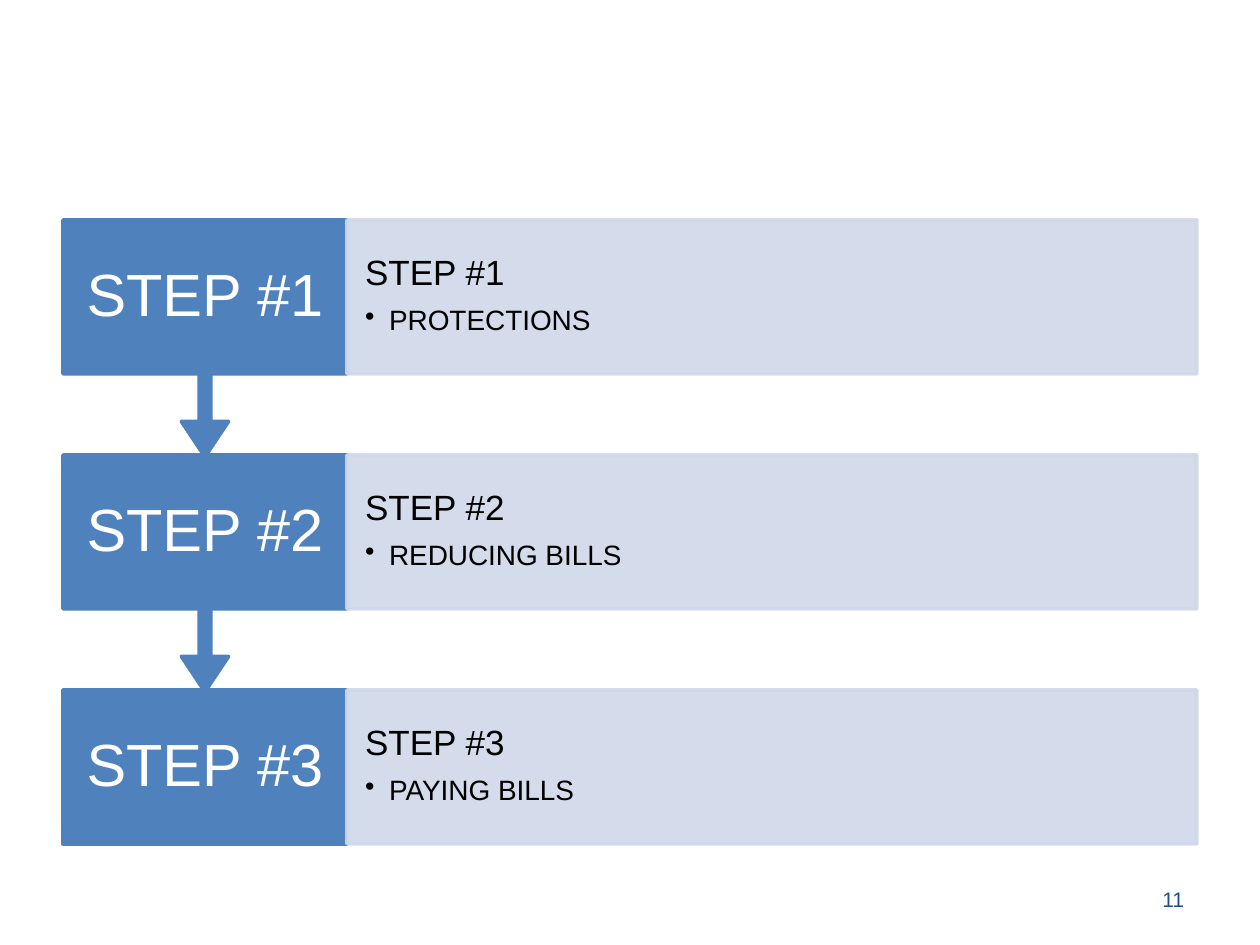
from lxml import etree
from pptx import Presentation
from pptx.dml.color import RGBColor
from pptx.enum.shapes import MSO_SHAPE
from pptx.enum.text import MSO_ANCHOR, PP_ALIGN
from pptx.oxml.ns import qn
from pptx.util import Pt

RECT = MSO_SHAPE.RECTANGLE
CALLOUT = MSO_SHAPE.DOWN_ARROW_CALLOUT
TOP, MIDDLE = MSO_ANCHOR.TOP, MSO_ANCHOR.MIDDLE
LEFT, CENTER, RIGHT = PP_ALIGN.LEFT, PP_ALIGN.CENTER, PP_ALIGN.RIGHT

BLUE = RGBColor(0x4F, 0x81, 0xBD)
PALE = RGBColor(0xD0, 0xD8, 0xE8)
NAVY = RGBColor(0x1D, 0x4F, 0x91)
WHITE = RGBColor(0xFF, 0xFF, 0xFF)
BLACK = RGBColor(0x00, 0x00, 0x00)

FONT = "Arial"
SCALE = 914400 / 126
STEPS = ["PROTECTIONS", "REDUCING BILLS", "PAYING BILLS"]
EDGE, FIRST, PITCH = 63, 220, 235
LABEL_W, PANEL_W = 284, 850
BOX_H, CALL_H = 154, 237


def px(n):
    return round(n * SCALE)


def set_frame(frame, pad_x, pad_y, anchor):
    frame.word_wrap = True
    frame.vertical_anchor = anchor
    frame.margin_left = frame.margin_right = px(pad_x)
    frame.margin_top = frame.margin_bottom = px(pad_y)


def style(para, size, color, align=LEFT):
    para.alignment = align
    para.line_spacing = 0.9
    for run in para.runs:
        run.font.name = FONT
        run.font.size = Pt(size)
        run.font.color.rgb = color


def add_box(slide, kind, x, y, w, h, color):
    box = slide.shapes.add_shape(kind, px(x), px(y), px(w), px(h))
    box.shadow.inherit = False
    box.fill.solid()
    box.fill.fore_color.rgb = color
    box.line.color.rgb = color
    box.line.width = Pt(2)
    return box


def fade(box, percent):
    """Set the opacity of the fill and line."""
    for color in box._element.spPr.iter(qn("a:srgbClr")):
        etree.SubElement(color, qn("a:alpha")).set("val", str(percent * 1000))


def add_bullet(para, indent):
    props = para._p.get_or_add_pPr()
    props.set("marL", str(px(indent)))
    props.set("indent", str(-px(indent)))
    etree.SubElement(props, qn("a:buChar")).set("char", "•")


def add_label(slide, text, y, last):
    """Add a step name, with an arrow down to the next step unless last."""
    kind, height = (RECT, BOX_H) if last else (CALLOUT, CALL_H)
    box = add_box(slide, kind, EDGE, y, LABEL_W, height, BLUE)
    if not last:
        for i, value in enumerate((0.05, 0.1, 0.15, 0.65)):
            box.adjustments[i] = value
    frame = box.text_frame
    set_frame(frame, 20, 33, MIDDLE)
    frame.text = text
    style(frame.paragraphs[0], 34, WHITE, CENTER)


def add_panel(slide, text, topic, y):
    box = add_box(slide, RECT, EDGE + LABEL_W, y, PANEL_W, BOX_H, PALE)
    fade(box, 90)
    frame = box.text_frame
    set_frame(frame, 18, 35, TOP)
    frame.text = f"{text}\n{topic}"
    head, item = frame.paragraphs
    style(head, 20, BLACK)
    head.space_after = Pt(8)
    style(item, 16, BLACK)
    item.level = 1
    add_bullet(item, 24)


def add_number(slide, text):
    box = slide.shapes.add_textbox(px(903), px(876), px(294), px(50))
    frame = box.text_frame
    set_frame(frame, 13, 6, MIDDLE)
    frame.text = text
    style(frame.paragraphs[0], 12, NAVY, RIGHT)


def main():
    deck = Presentation()
    deck.slide_width, deck.slide_height = px(1260), px(945)
    slide = deck.slides.add_slide(deck.slide_layouts[6])
    add_number(slide, "11")
    for i in reversed(range(len(STEPS))):
        text, y = f"STEP #{i + 1}", FIRST + i * PITCH
        add_label(slide, text, y, i == len(STEPS) - 1)
        add_panel(slide, text, STEPS[i], y)
    deck.save("out.pptx")


if __name__ == "__main__":
    main()
